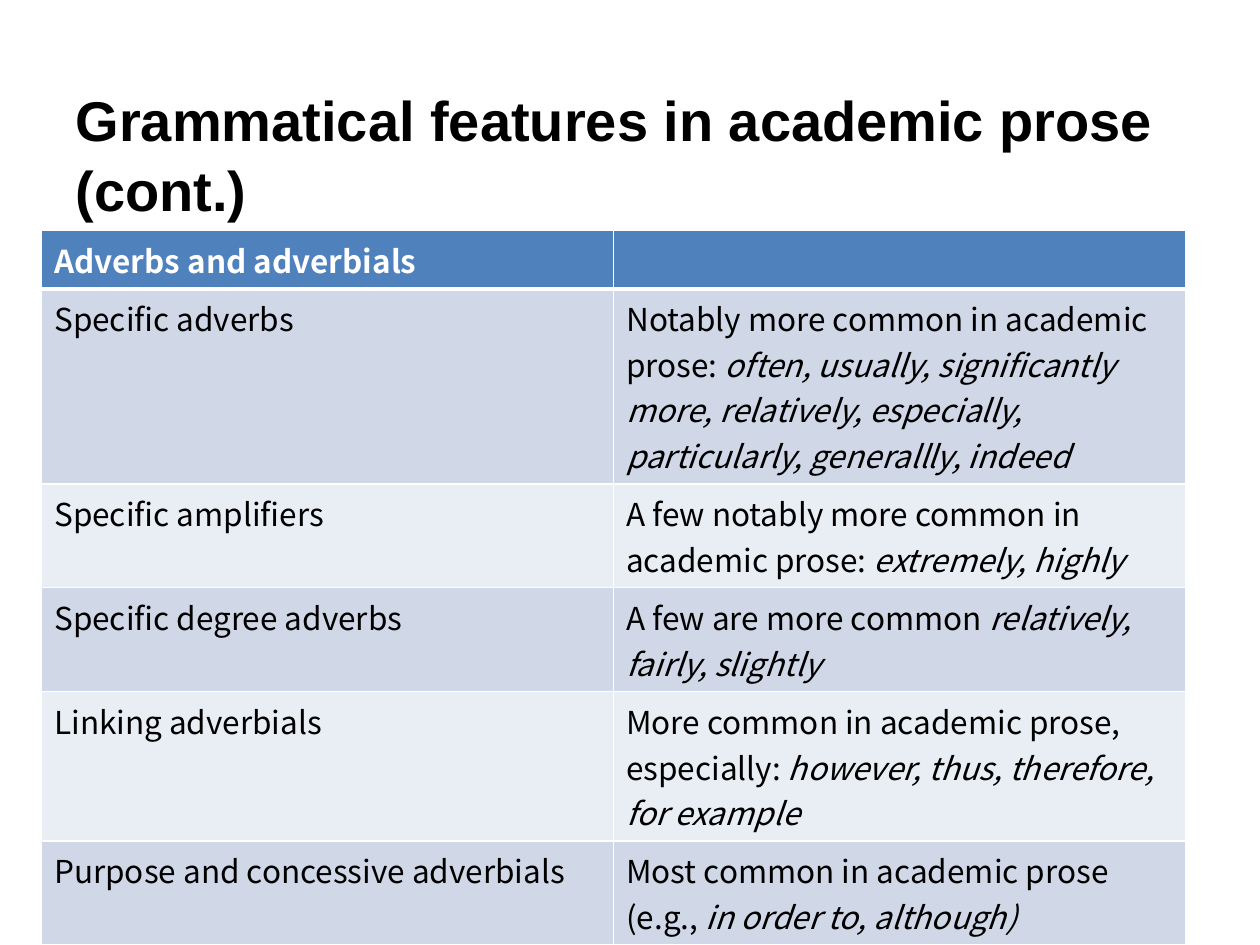
from pptx import Presentation
from pptx.dml.color import RGBColor
from pptx.enum.text import MSO_ANCHOR, MSO_AUTO_SIZE, PP_ALIGN
from pptx.oxml.ns import qn
from pptx.util import Cm, Pt
from lxml import etree

TOP = MSO_ANCHOR.TOP
NO_FIT = MSO_AUTO_SIZE.NONE
LEFT = PP_ALIGN.LEFT
TITLE_ONLY = 5

BLACK = RGBColor(0x00, 0x00, 0x00)
WHITE = RGBColor(0xFF, 0xFF, 0xFF)
HEADER_BLUE = RGBColor(0x4F, 0x81, 0xBD)
BANDS = (RGBColor(0xD0, 0xD8, 0xE8), RGBColor(0xE9, 0xED, 0xF4))

TITLE_FONT = {"name": "Arial", "size": Pt(32), "bold": True}
HEADER_FONT = {"name": "Noto Sans CJK KR", "size": Pt(18), "bold": True}
BODY_FONT = {**HEADER_FONT, "bold": False}
EXAMPLE_FONT = {**BODY_FONT, "italic": True}

TITLE_BOX = (Cm(1.27), Cm(1.47), Cm(22.86), Cm(2.74))
TABLE_BOX = (Cm(0.84), Cm(4.65), Cm(23.06), Cm(9.86))
HEADER_HEIGHT = Cm(0.85)
TALL_HEIGHT = Cm(3.22)
ROW_HEIGHT = Cm(1.45)

HEADING = "Adverbs and adverbials"
FEATURES = [
    ("Specific adverbs", "Notably more common in academic prose: ",
     "often, usually, significantly more, relatively, especially, "
     "particularly, generallly, indeed"),
    ("Specific amplifiers", "A few notably more common in academic prose: ",
     "extremely, highly"),
    ("Specific degree adverbs", "A few are more common ",
     "relatively, fairly, slightly"),
    ("Linking adverbials", "More common in academic prose, especially: ",
     "however, thus, therefore, for example"),
    ("Purpose and concessive adverbials",
     "Most common in academic prose (e.g., ", "in order to, although)"),
]


def add_span(para, text, formats, color):
    """Append a formatted run to a paragraph."""
    span = para.add_run()
    span.text = text
    for name, value in formats.items():
        setattr(span.font, name, value)
    span.font.color.rgb = color


def style_cell(cell, fill, bottom_width):
    """Give a cell its white borders and its fill."""
    properties = cell._tc.get_or_add_tcPr()
    widths = {"a:lnL": 1, "a:lnR": 1, "a:lnT": 1, "a:lnB": bottom_width}
    for tag, width in widths.items():
        line = etree.SubElement(properties, qn(tag), w=str(Pt(width)))
        solid = etree.SubElement(line, qn("a:solidFill"))
        etree.SubElement(solid, qn("a:srgbClr"), val=str(WHITE))
    cell.fill.solid()
    cell.fill.fore_color.rgb = fill


def build_title(page, box):
    """Place and format the title placeholder."""
    title = page.shapes.title
    title.left, title.top, title.width, title.height = box
    frame = title.text_frame
    settings = {"auto_size": NO_FIT, "vertical_anchor": TOP,
                "word_wrap": True, "margin_top": Cm(0.18)}
    for name, value in settings.items():
        setattr(frame, name, value)
    para = frame.paragraphs[0]
    para.alignment = LEFT
    para.line_spacing = 1.05
    add_span(para, "Grammatical features in academic prose (cont.)",
             TITLE_FONT, BLACK)


def build_table(page, box):
    """Build the two-column table of features and examples."""
    table = page.shapes.add_table(len(FEATURES) + 1, 2, *box).table
    for column in table.columns:
        column.width = box[2] // 2
    heights = [HEADER_HEIGHT, TALL_HEIGHT] + [ROW_HEIGHT] * (len(FEATURES) - 1)
    for row, height in zip(table.rows, heights):
        row.height = height

    for cell in table.rows[0].cells:
        style_cell(cell, HEADER_BLUE, 3)
    add_span(table.cell(0, 0).text_frame.paragraphs[0], HEADING,
             HEADER_FONT, WHITE)

    for index, (feature, usage, examples) in enumerate(FEATURES):
        cells = table.rows[index + 1].cells
        for cell in cells:
            style_cell(cell, BANDS[index % 2], 1)
        name_para, usage_para = (c.text_frame.paragraphs[0] for c in cells)
        add_span(name_para, feature, BODY_FONT, BLACK)
        add_span(usage_para, usage, BODY_FONT, BLACK)
        add_span(usage_para, examples, EXAMPLE_FONT, BLACK)


def main():
    """Create the deck with its single slide."""
    deck = Presentation()
    deck.slide_width, deck.slide_height = Cm(25.4), Cm(19.05)
    page = deck.slides.add_slide(deck.slide_layouts[TITLE_ONLY])
    build_title(page, TITLE_BOX)
    build_table(page, TABLE_BOX)
    deck.save("out.pptx")


if __name__ == "__main__":
    main()
